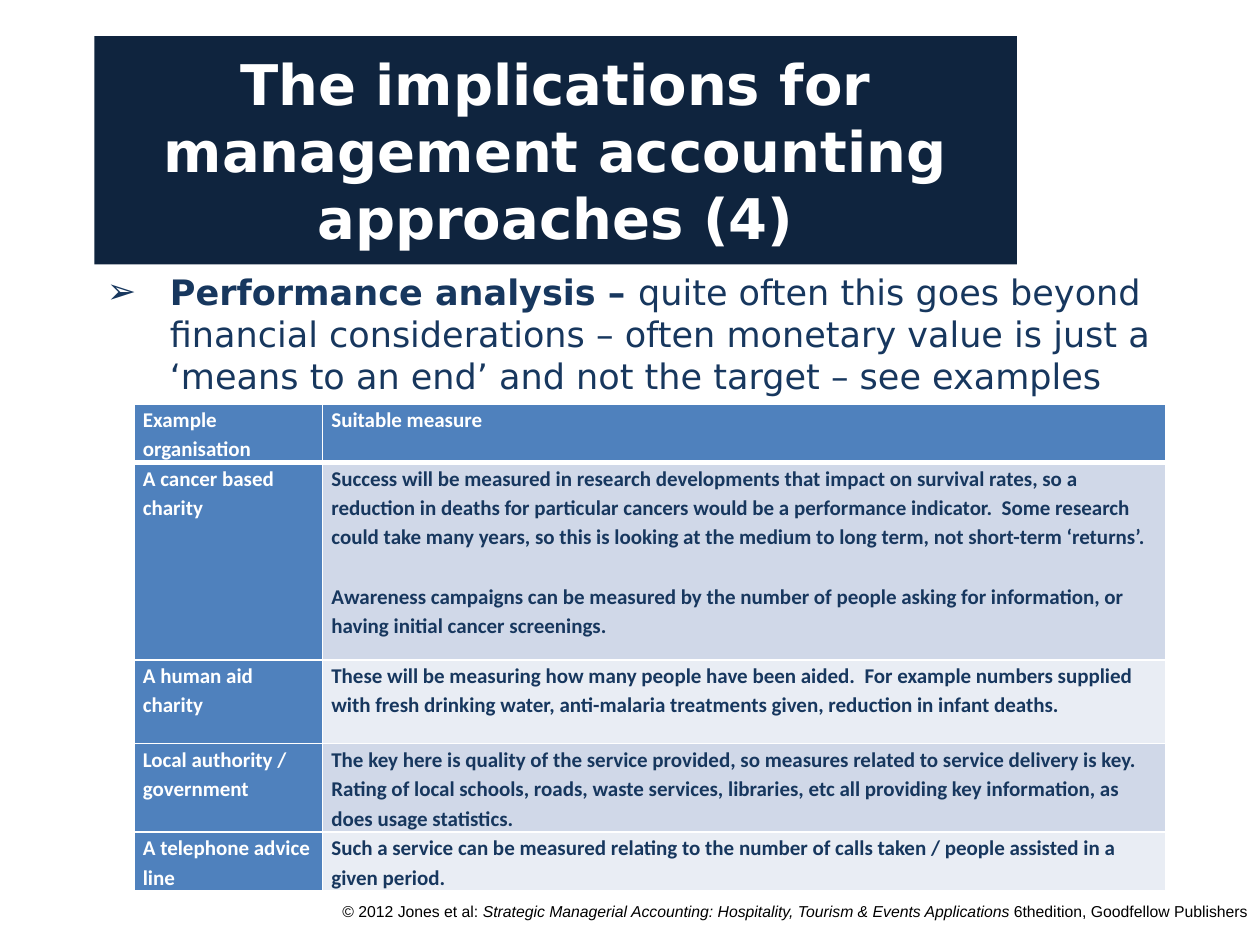
from lxml.etree import SubElement
from pptx import Presentation
from pptx.dml.color import RGBColor
from pptx.enum.text import MSO_ANCHOR, MSO_AUTO_SIZE, PP_ALIGN
from pptx.oxml.ns import qn
from pptx.util import Cm, Pt

COLORS = {
    "title_fill": "0F243E",
    "navy": "17375E",
    "header": "4F81BD",
    "band_dark": "D0D8E8",
    "band_light": "E9EDF4",
    "white": "FFFFFF",
    "black": "000000",
}

COLUMN_WIDTHS = (3.8, 17)
ROW_HEIGHTS = (1.18, 3.98, 1.69, 1.78, 1.19)
MEASURES = [
    ("Example organisation", ["Suitable measure"]),
    ("A cancer based charity", [
        "Success will be measured in research developments that impact on survival rates, "
        "so a reduction in deaths for particular cancers would be a performance indicator.  "
        "Some research could take many years, so this is looking at the medium to long term, "
        "not short-term ‘returns’.",
        "Awareness campaigns can be measured by the number of people asking for information, "
        "or having initial cancer screenings.",
    ]),
    ("A human aid charity", [
        "These will be measuring how many people have been aided.  For example numbers supplied "
        "with fresh drinking water, anti-malaria treatments given, reduction in infant deaths.",
    ]),
    ("Local authority / government", [
        "The key here is quality of the service provided, so measures related to service "
        "delivery is key.  Rating of local schools, roads, waste services, libraries, etc all "
        "providing key information, as does usage statistics.",
    ]),
    ("A telephone advice line", [
        "Such a service can be measured relating to the number of calls taken / people assisted "
        "in a given period.",
    ]),
]


def color(name):
    return RGBColor.from_string(COLORS[name])


def place(shape, left, top, width, height):
    shape.left, shape.top = Cm(left), Cm(top)
    shape.width, shape.height = Cm(width), Cm(height)


def style(paragraph, font_name, size, color_name, bold=None):
    font = paragraph.font
    font.name, font.size, font.bold = font_name, Pt(size), bold
    font.color.rgb = color(color_name)


def add_run(paragraph, text):
    run = paragraph.add_run()
    run.text = text
    return run


def add_bullet(paragraph, character, indent):
    properties = paragraph._p.get_or_add_pPr()
    properties.set("marL", str(Cm(indent)))
    properties.set("indent", str(-Cm(indent)))
    SubElement(properties, qn("a:buFont"), typeface="Arial")
    SubElement(properties, qn("a:buChar"), char=character)


def fill_title(title):
    place(title, 1.9, 0.73, 18.6, 4.6)
    title.fill.solid()
    title.fill.fore_color.rgb = color("title_fill")
    frame = title.text_frame
    frame.text = "The implications for management accounting approaches (4)"
    frame.auto_size = MSO_AUTO_SIZE.NONE
    frame.vertical_anchor = MSO_ANCHOR.MIDDLE
    paragraph = frame.paragraphs[0]
    paragraph.alignment = PP_ALIGN.CENTER
    style(paragraph, "DejaVu Sans", 32, "white", True)


def fill_body(body):
    place(body, 1.9, 5.33, 22.4, 2.8)
    frame = body.text_frame
    frame.auto_size = MSO_AUTO_SIZE.NONE
    frame.vertical_anchor = MSO_ANCHOR.TOP
    paragraph = frame.paragraphs[0]
    paragraph.alignment = PP_ALIGN.LEFT
    paragraph.space_before = Pt(0)
    add_bullet(paragraph, "➢", 1.27)
    style(paragraph, "DejaVu Sans", 20, "navy")
    add_run(paragraph, "Performance analysis – ").font.bold = True
    add_run(paragraph, "quite often this goes beyond financial considerations – often monetary "
                       "value is just a ‘means to an end’ and not the target – see examples")


def add_borders(cell, widths):
    properties = cell._tc.get_or_add_tcPr()
    for side, width in zip("LRTB", widths):
        line = SubElement(properties, qn(f"a:ln{side}"), w=str(Pt(width)))
        fill = SubElement(line, qn("a:solidFill"))
        SubElement(fill, qn("a:srgbClr"), val=COLORS["white"])


def fill_cell(cell, texts, fill_name, text_color, border_widths):
    cell.margin_left = cell.margin_right = Cm(0.18)
    cell.margin_top = cell.margin_bottom = 0
    add_borders(cell, border_widths)
    cell.fill.solid()
    cell.fill.fore_color.rgb = color(fill_name)
    frame = cell.text_frame
    for index, text in enumerate(texts):
        paragraph = frame.add_paragraph() if index else frame.paragraphs[0]
        paragraph.line_spacing = 1.15
        paragraph.space_before = Pt(17 if index else 0)
        add_run(paragraph, text)
        style(paragraph, "Calibri", 12, text_color, True)


def add_measures_table(slide):
    table = slide.shapes.add_table(
        len(MEASURES), len(COLUMN_WIDTHS),
        Cm(2.7), Cm(8.14), Cm(sum(COLUMN_WIDTHS)), Cm(sum(ROW_HEIGHTS)),
    ).table
    for column, width in zip(table.columns, COLUMN_WIDTHS):
        column.width = Cm(width)
    for index, (organisation, measures) in enumerate(MEASURES):
        table.rows[index].height = Cm(ROW_HEIGHTS[index])
        borders = (1, 1, 3 if index == 1 else 1, 3 if index == 0 else 1)
        band = "band_dark" if index % 2 else "band_light"
        measure_fill, measure_color = (band, "navy") if index else ("header", "white")
        fill_cell(table.cell(index, 0), [organisation], "header", "white", borders)
        fill_cell(table.cell(index, 1), measures, measure_fill, measure_color, borders)


def add_copyright(slide):
    box = slide.shapes.add_textbox(Cm(5.66), Cm(18.06), Cm(19.74), Cm(0.99))
    frame = box.text_frame
    frame.word_wrap = True
    paragraph = frame.paragraphs[0]
    paragraph.alignment = PP_ALIGN.RIGHT
    style(paragraph, "Arial", 9, "black")
    add_run(paragraph, "© 2012 Jones et al: ")
    add_run(paragraph, "Strategic Managerial Accounting: Hospitality, Tourism & Events "
                       "Applications ").font.italic = True
    add_run(paragraph, "6thedition, Goodfellow Publishers")


def main():
    presentation = Presentation()
    presentation.slide_width, presentation.slide_height = Cm(25.4), Cm(19.05)
    slide = presentation.slides.add_slide(presentation.slide_layouts[0])
    add_copyright(slide)
    fill_title(slide.shapes.title)
    fill_body(slide.placeholders[1])
    add_measures_table(slide)
    presentation.save("out.pptx")


if __name__ == "__main__":
    main()
